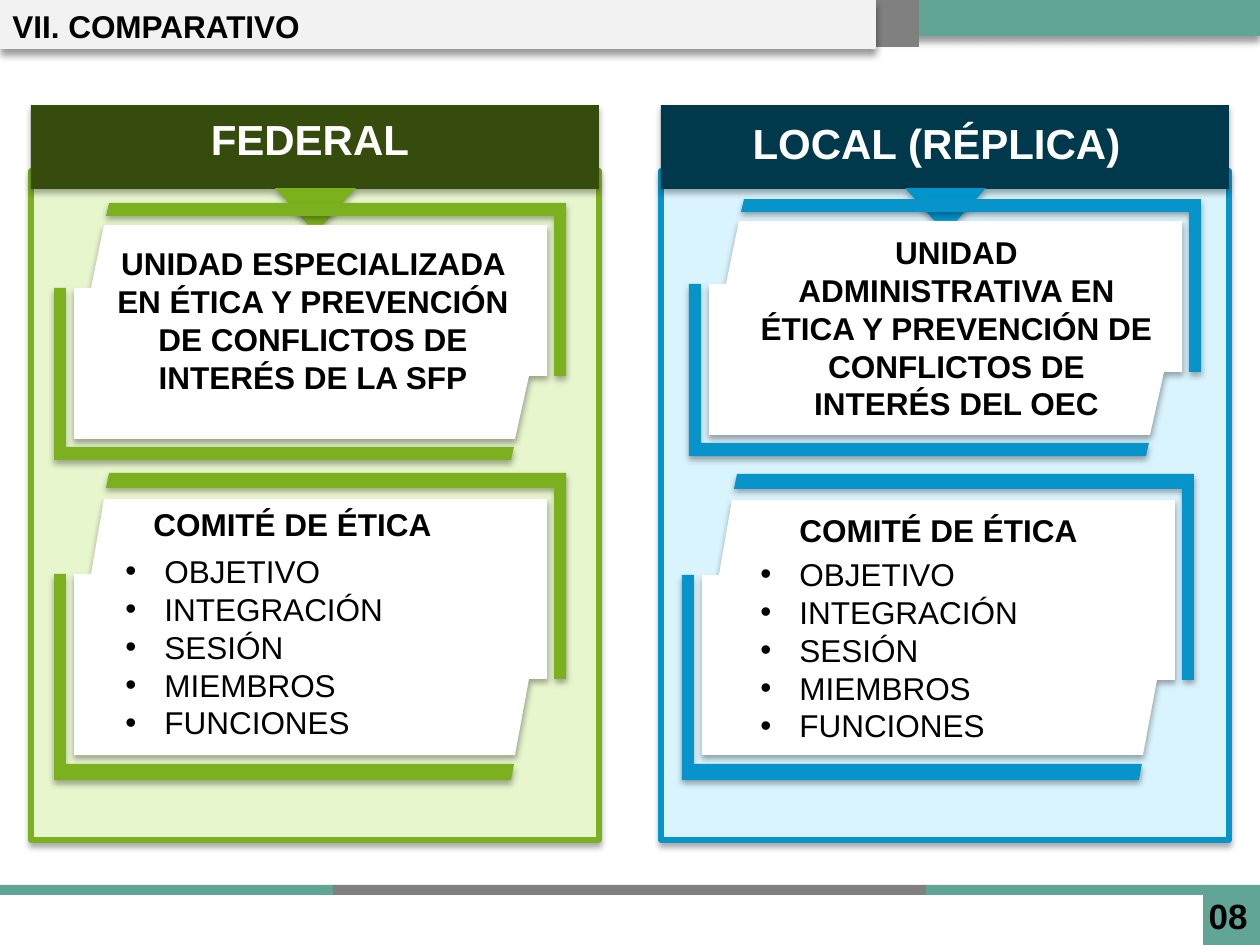
from dataclasses import dataclass

from lxml.etree import SubElement
from pptx import Presentation
from pptx.dml.color import RGBColor
from pptx.enum.shapes import MSO_SHAPE as Shape
from pptx.enum.text import MSO_ANCHOR as Anchor, MSO_AUTO_SIZE as AutoSize, PP_ALIGN as Align
from pptx.oxml.ns import qn
from pptx.util import Pt

PX = 914400 / 126


@dataclass(frozen=True)
class Theme:
    font: str = "Arial"
    teal: str = "61A596"
    gray: str = "808080"
    light: str = "F2F2F2"
    white: str = "FFFFFF"
    black: str = "000000"
    body_size: int = 18
    page_size: int = 20
    header_size: int = 24
    border: int = 3
    bar_shadow: tuple = (40, 4, 3)  # opacity %, blur pt, distance pt
    card_shadow: tuple = (32, 3.5, 2.2)


@dataclass(frozen=True)
class Palette:
    accent: str
    arrow: str
    pale: str
    dark: str


THEME = Theme()
GREEN = Palette("7BB01F", "7BB21B", "E8F6CE", "354C0C")
BLUE = Palette("0794CA", "0095CD", "DAF4FE", "00384C")
TOPICS = ["OBJETIVO", "INTEGRACIÓN", "SESIÓN", "MIEMBROS", "FUNCIONES"]

COLUMNS = [
    dict(
        left=31, palette=GREEN,
        title=("FEDERAL", (146, 107, 328, 63)),
        unit=("UNIDAD ESPECIALIZADA EN ÉTICA Y PREVENCIÓN DE CONFLICTOS DE "
              "INTERÉS DE LA SFP", (95, 238, 436, 165)),
        committee_at=(84, 499, 417, 50), topics_at=(113, 546, 457, 204),
        frames=[(54, 203, 257), (54, 473, 307)],
    ),
    dict(
        left=661, palette=BLUE,
        title=("LOCAL (RÉPLICA)", (730, 111, 413, 63)),
        unit=("UNIDAD ADMINISTRATIVA EN ÉTICA Y PREVENCIÓN DE CONFLICTOS DE "
              "INTERÉS DEL OEC", (748, 227, 417, 204)),
        committee_at=(730, 505, 417, 50), topics_at=(748, 549, 340, 204),
        frames=[(689, 199, 257), (682, 474, 306)],
    ),
]


def px(*lengths):
    return [round(length * PX) for length in lengths]


def paint(shape, fill, shadow=None, border=None):
    shape.fill.solid()
    shape.fill.fore_color.rgb = RGBColor.from_string(fill)
    if border:
        shape.line.color.rgb = RGBColor.from_string(border)
        shape.line.width = Pt(THEME.border)
    else:
        shape.line.fill.background()
    shape.shadow.inherit = False
    if shadow:
        opacity, blur, distance = shadow
        effects = shape._element.spPr.find(qn("a:effectLst"))
        outer = SubElement(effects, qn("a:outerShdw"), blurRad=str(Pt(blur)),
                           dist=str(Pt(distance)), dir="5400000",
                           algn="t", rotWithShape="0")
        color = SubElement(outer, qn("a:srgbClr"), val=THEME.black)
        SubElement(color, qn("a:alpha"), val=str(opacity * 1000))


def add_block(slide, box, fill, shadow=None, border=None, kind=Shape.RECTANGLE):
    block = slide.shapes.add_shape(kind, *px(*box))
    paint(block, fill, shadow, border)
    return block


def add_outline(slide, contours, fill):
    """Draw one freeform from closed lists of px points."""
    first, *others = contours
    builder = slide.shapes.build_freeform(*first[0], scale=PX)
    builder.add_line_segments(first[1:], close=True)
    for contour in others:
        builder.move_to(*contour[0])
        builder.add_line_segments(contour[1:], close=True)
    paint(builder.convert_to_shape(), fill, THEME.card_shadow)


def add_frame(slide, left, top, height, accent):
    """Notched white card between two L-shaped brackets; heights scale together."""
    def place(points):
        return [(left + x, top + round(height * share)) for x, share in points]

    bar, card_top, notch, arm_end, card_end, base = 0.05, 0.084, 0.33, 0.672, 0.917, 0.949
    card = [(50, card_top), (493, card_top), (493, arm_end), (475, arm_end),
            (461, card_end), (20, card_end), (20, notch), (37, notch)]
    lower = [(0, notch), (12, notch), (12, base), (460, base), (457, 1), (0, 1)]
    upper = [(55, 0), (512, 0), (512, arm_end), (500, arm_end), (500, bar), (52, bar)]
    add_outline(slide, [place(card)], THEME.white)
    add_outline(slide, [place(lower), place(upper)], accent)


def add_bullet(paragraph):
    properties = paragraph._p.get_or_add_pPr()
    indent = px(39)[0]
    properties.set("marL", str(indent))
    properties.set("indent", str(-indent))
    SubElement(properties, qn("a:buFont"), typeface=THEME.font)
    SubElement(properties, qn("a:buChar"), char="•")


def add_text(slide, lines, box, size=THEME.body_size, color=THEME.black,
             bold=True, align=Align.CENTER, anchor=Anchor.TOP, bullets=False):
    frame = slide.shapes.add_textbox(*px(*box)).text_frame
    frame.word_wrap = True
    frame.auto_size = AutoSize.SHAPE_TO_FIT_TEXT
    frame.vertical_anchor = anchor
    frame.text = "\n".join(lines)
    for paragraph in frame.paragraphs:
        paragraph.alignment = align
        if bullets:
            add_bullet(paragraph)
        for run in paragraph.runs:
            for name, value in dict(name=THEME.font, size=Pt(size), bold=bold).items():
                setattr(run.font, name, value)
            run.font.color.rgb = RGBColor.from_string(color)


def add_banner_and_footer(slide):
    add_block(slide, (596, 0, 664, 36), THEME.teal, THEME.bar_shadow)
    add_block(slide, (833, 0, 86, 47), THEME.gray)
    add_block(slide, (0, 0, 876, 49), THEME.light, THEME.bar_shadow)
    add_block(slide, (1203, 890, 57, 55), THEME.teal)
    for left, width, color in [(0, 334, THEME.teal), (333, 594, THEME.gray),
                               (926, 334, THEME.teal)]:
        add_block(slide, (left, 885, width, 10), color)
    add_text(slide, ["VII. COMPARATIVO"], (0, 1, 958, 50),
             align=Align.LEFT, anchor=Anchor.MIDDLE)
    add_text(slide, ["08"], (1196, 888, 64, 55), THEME.page_size, align=Align.RIGHT)


def add_column(slide, left, palette, title, unit, committee_at, topics_at, frames):
    shadow = THEME.card_shadow
    add_block(slide, (left, 171, 568, 669), palette.pale, shadow, palette.accent)
    add_block(slide, (left, 105, 568, 84), palette.dark, shadow)
    arrow = add_block(slide, (left + 244, 188, 81, 45), palette.arrow, shadow,
                      kind=Shape.ISOSCELES_TRIANGLE)
    arrow.rotation = 180
    for frame in frames:
        add_frame(slide, *frame, palette.accent)

    title_text, title_at = title
    unit_text, unit_at = unit
    add_text(slide, [title_text], title_at, THEME.header_size, THEME.white)
    add_text(slide, [unit_text], unit_at)
    add_text(slide, ["COMITÉ DE ÉTICA"], committee_at)
    add_text(slide, TOPICS, topics_at, bold=False, align=Align.LEFT, bullets=True)


def main():
    deck = Presentation()
    deck.slide_width, deck.slide_height = px(1260, 945)
    slide = deck.slides.add_slide(deck.slide_layouts[6])
    add_banner_and_footer(slide)
    for column in COLUMNS:
        add_column(slide, **column)
    deck.save("out.pptx")


if __name__ == "__main__":
    main()
